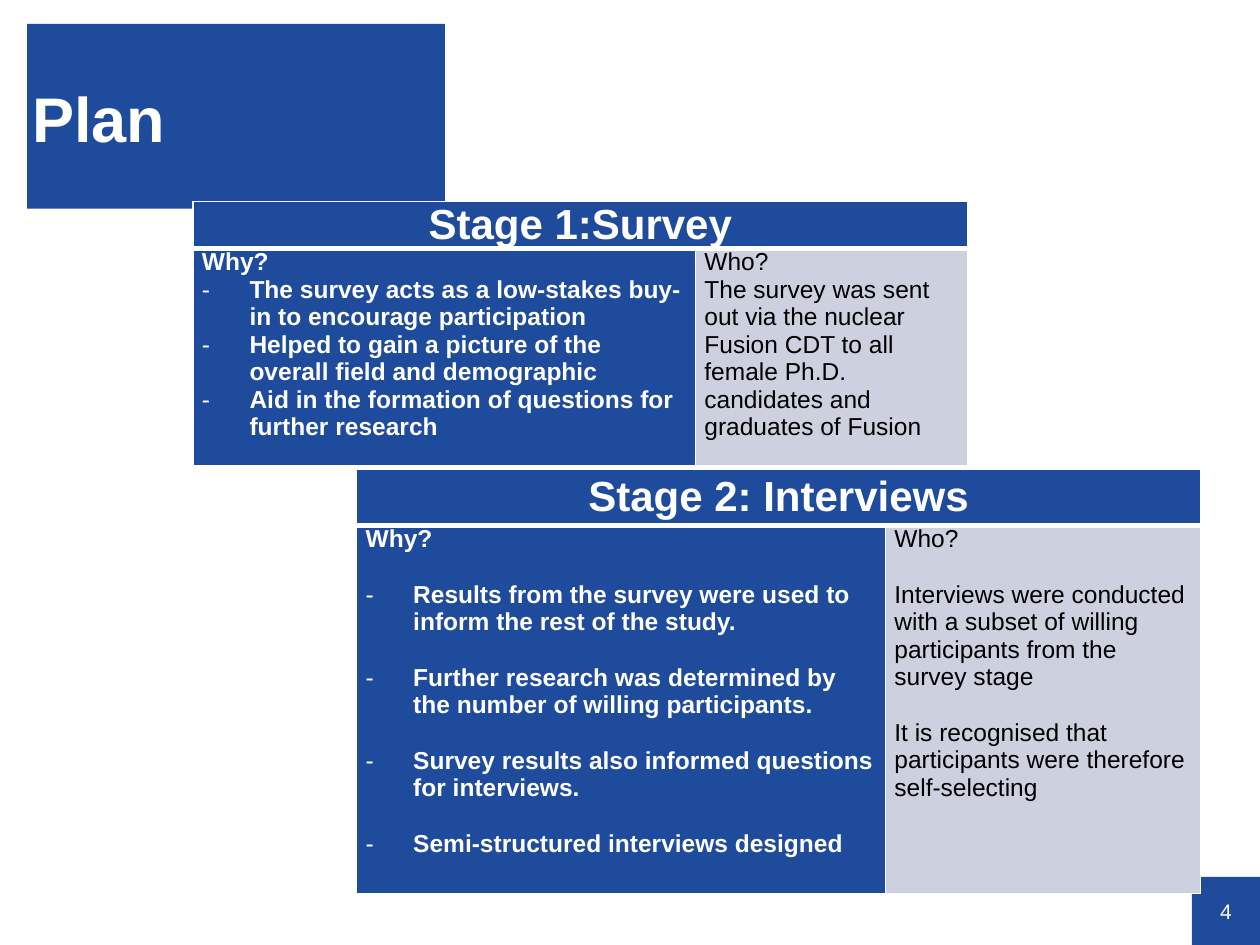
from lxml import etree
from pptx import Presentation
from pptx.dml.color import RGBColor
from pptx.enum.shapes import MSO_SHAPE
from pptx.enum.text import MSO_ANCHOR as Anchor, PP_ALIGN as Align
from pptx.oxml import parse_xml
from pptx.oxml.ns import nsdecls, qn
from pptx.util import Cm, Pt

BLUE = RGBColor(0x1E, 0x4B, 0x9B)
GREY = RGBColor(0xCD, 0xD0, 0xDE)
WHITE = RGBColor(0xFF, 0xFF, 0xFF)
BLACK = RGBColor(0, 0, 0)


def style_text(para, size, colour, bold=False):
    for span in para.runs:
        span.font.name = "Arial"
        span.font.size = Pt(size)
        span.font.bold = bold
        span.font.color.rgb = colour


def style_cell(cell, fill, widths):
    """Fill a cell and draw its white borders: left, right, top, bottom."""
    cell.margin_left = cell.margin_right = Cm(0.18)
    cell.margin_top = cell.margin_bottom = 0
    cell.fill.solid()
    cell.fill.fore_color.rgb = fill
    properties = cell._tc.get_or_add_tcPr()
    for index, (side, width) in enumerate(zip("LRTB", widths)):
        properties.insert(index, parse_xml(
            f'<a:ln{side} {nsdecls("a")} w="{Pt(width)}"><a:solidFill>'
            f'<a:srgbClr val="{WHITE}"/></a:solidFill></a:ln{side}>'))


deck = Presentation()
deck.slide_width, deck.slide_height = Cm(25.4), Cm(19.05)
page = deck.slides.add_slide(deck.slide_layouts[6])

# Page number and title: text, place, size, bold, alignment, insets
blocks = [
    ("4", (24.03, 17.68, 1.37, 1.37), 12, False, Align.CENTER, (0, 0)),
    ("Plan", (0.55, 0.48, 8.42, 3.73), 36, True, Align.LEFT, (0.1, 0.05)),
]
for text, place, size, bold, align, (left, top) in blocks:
    box = page.shapes.add_shape(MSO_SHAPE.RECTANGLE, *map(Cm, place))
    box.shadow.inherit = False
    box.fill.solid()
    box.fill.fore_color.rgb = BLUE
    box.line.fill.background()
    frame = box.text_frame
    frame.margin_left, frame.margin_top = Cm(left), Cm(top)
    frame.margin_right = frame.margin_bottom = 0
    frame.vertical_anchor = Anchor.MIDDLE
    frame.word_wrap = True
    frame.text = text
    frame.paragraphs[0].alignment = align
    style_text(frame.paragraphs[0], size, WHITE, bold)

# Stage tables, the later stage behind the earlier one
stages = [
    {
        "title": "Stage 2: Interviews",
        "corner": (7.19, 9.45), "columns": (10.66, 6.35), "rows": (1.14, 7.42),
        "gap": 16,
        "why": [
            "Results from the survey were used to inform the rest of the study.",
            "Further research was determined by the number of willing participants.",
            "Survey results also informed questions for interviews.",
            "Semi-structured interviews designed",
        ],
        "who": [
            "Interviews were conducted with a subset of willing participants "
            "from the survey stage",
            "It is recognised that participants were therefore self-selecting",
        ],
    },
    {
        "title": "Stage 1:Survey",
        "corner": (3.89, 4.06), "columns": (10.13, 5.49), "rows": (0.95, 4.38),
        "gap": 0,
        "why": [
            "The survey acts as a low-stakes buy-in to encourage participation",
            "Helped to gain a picture of the overall field and demographic",
            "Aid in the formation of questions for further research",
        ],
        "who": [
            "The survey was sent out via the nuclear Fusion CDT to all female "
            "Ph.D. candidates and graduates of Fusion",
        ],
    },
]
for stage in stages:
    columns, rows = stage["columns"], stage["rows"]
    table = page.shapes.add_table(
        2, 2, *map(Cm, stage["corner"]), Cm(sum(columns)), Cm(sum(rows))).table
    table.first_row = table.horz_banding = False
    for index in range(2):
        table.columns[index].width = Cm(columns[index])
        table.rows[index].height = Cm(rows[index])
        style_cell(table.cell(0, index), BLUE, (1, 1, 1, 3))

    # Heading across both columns
    heading = table.cell(0, 0)
    heading.merge(table.cell(0, 1))
    heading.vertical_anchor = Anchor.MIDDLE
    para = heading.text_frame.paragraphs[0]
    para.text = stage["title"]
    para.alignment = Align.CENTER
    style_text(para, 24, WHITE, True)

    # Reasons as a dashed list, participants as plain text
    bodies = [
        ("Why?", stage["why"], BLUE, WHITE, True),
        ("Who?", stage["who"], GREY, BLACK, False),
    ]
    for column, (question, answers, fill, colour, is_list) in enumerate(bodies):
        cell = table.cell(1, column)
        style_cell(cell, fill, (1, 1, 3, 1))
        frame = cell.text_frame
        frame.text = question
        style_text(frame.paragraphs[0], 14, colour, is_list)
        for answer in answers:
            para = frame.add_paragraph()
            para.text = answer
            if is_list:
                properties = para._p.get_or_add_pPr()
                properties.set("marL", str(Cm(0.96)))
                properties.set("indent", str(-Cm(0.96)))
                etree.SubElement(properties, qn("a:buFont"), typeface="Arial")
                etree.SubElement(properties, qn("a:buChar"), char="-")
            para.space_before = Pt(stage["gap"])
            style_text(para, 14, colour, is_list)

deck.save("out.pptx")
